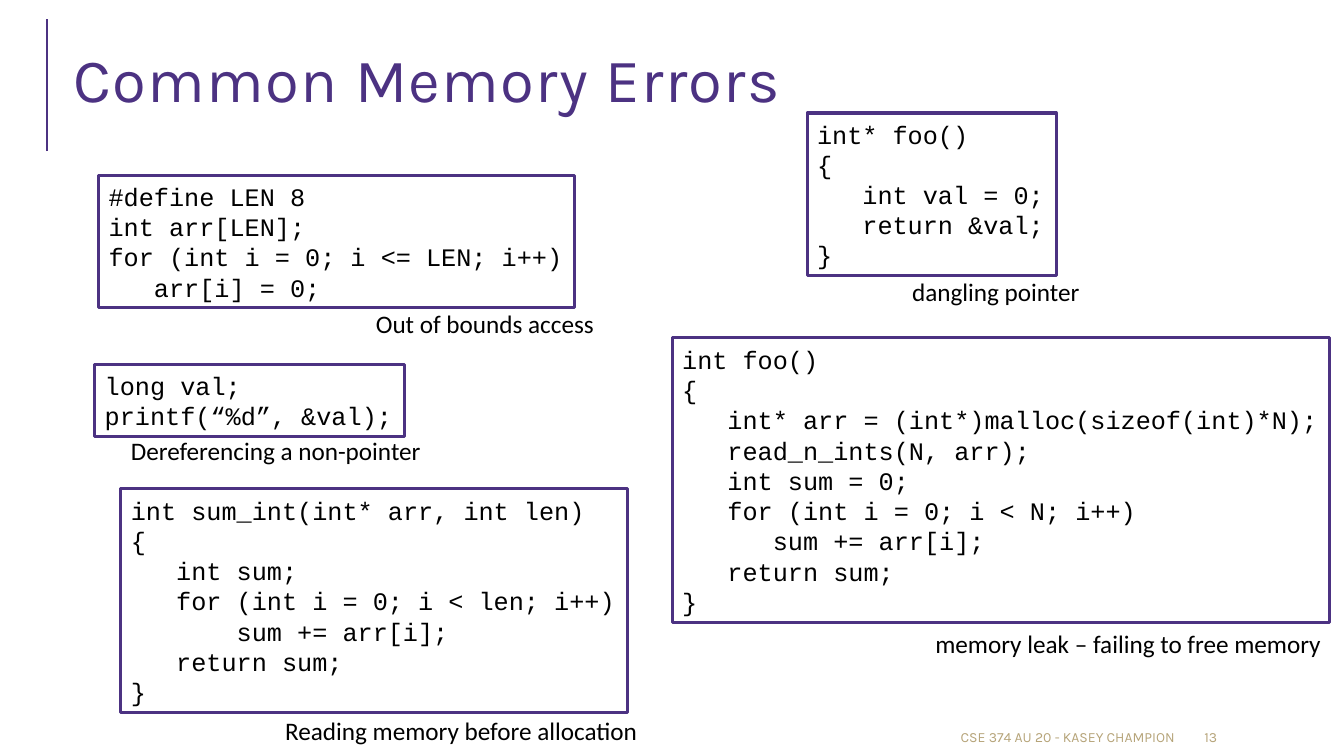
import pptx
import pptx.util
import pptx.dml.color
import pptx.enum.shapes
import pptx.enum.text
import lxml.etree

Pt = pptx.util.Pt
COLORS = {"purple": "4C3282", "gold": "B6A479", "ink": "000000"}

TITLE = "Common Memory Errors"
FOOTER = "CSE 374 AU 20 - KASEY CHAMPION"
PAGE_NUMBER = "13"

ERRORS = [
    {"at": (70.5, 125.3), "caption": "Out of bounds access",
     "caption_at": (261.4, 216.7), "caption_width": 172,
     "code": ["#define LEN 8",
              "int arr[LEN];",
              "for (int i = 0; i <= LEN; i++)",
              "   arr[i] = 0;"]},
    {"at": (576.5, 80.7), "caption": "dangling pointer",
     "caption_at": (644.4, 193.7), "caption_width": 143,
     "code": ["int* foo()",
              "{",
              "   int val = 0;",
              "   return &val;",
              "}"]},
    {"at": (67.7, 260.6), "caption": "Dereferencing a non-pointer",
     "caption_at": (86.4, 307.4), "caption_width": 224,
     "code": ["long val;",
              "printf(“%d”, &val);"]},
    {"at": (86.4, 349.2), "caption": "Reading memory before allocation",
     "caption_at": (196.6, 507.6), "caption_width": 269,
     "code": ["int sum_int(int* arr, int len)",
              "{",
              "   int sum;",
              "   for (int i = 0; i < len; i++)",
              "       sum += arr[i];",
              "   return sum;",
              "}"]},
    {"at": (480.2, 241.2), "caption": "memory leak – failing to free memory",
     "caption_at": (661, 445), "caption_width": 320,
     "code": ["int foo()",
              "{",
              "   int* arr = (int*)malloc(sizeof(int)*N);",
              "   read_n_ints(N, arr);",
              "   int sum = 0;",
              "   for (int i = 0; i < N; i++)",
              "      sum += arr[i];",
              "   return sum;",
              "}"]},
]

COLUMN_WIDTH = 10.8
LINE_HEIGHT = 21.8
CAPTION_HEIGHT = 29
LEFT = pptx.enum.text.PP_ALIGN.LEFT
RIGHT = pptx.enum.text.PP_ALIGN.RIGHT
MIDDLE = pptx.enum.text.MSO_ANCHOR.MIDDLE
TOP = pptx.enum.text.MSO_ANCHOR.TOP


def color(name):
    return pptx.dml.color.RGBColor.from_string(COLORS[name])


def style(paragraph, font, size, ink, align=LEFT):
    paragraph.alignment = align
    paragraph.font.name = font
    paragraph.font.size = Pt(size)
    paragraph.font.color.rgb = color(ink)


def add_label(slide, text, box, font, size, ink, align=LEFT, anchor=TOP):
    frame = slide.shapes.add_textbox(*map(Pt, box)).text_frame
    frame.word_wrap = True
    frame.vertical_anchor = anchor
    frame.text = text
    style(frame.paragraphs[0], font, size, ink, align)


def add_code(slide, lines, left, top):
    width = max(map(len, lines)) * COLUMN_WIDTH + 16
    height = len(lines) * LINE_HEIGHT + 7.4
    listing = slide.shapes.add_shape(
        pptx.enum.shapes.MSO_SHAPE.RECTANGLE, Pt(left), Pt(top), Pt(width), Pt(height))
    listing.shadow.inherit = False
    listing.fill.background()
    listing.line.color.rgb = color("purple")
    listing.line.width = Pt(2.25)
    frame = listing.text_frame
    frame.word_wrap = False
    frame.vertical_anchor = MIDDLE
    frame.text = "\n".join(line.lstrip() for line in lines)
    for paragraph, line in zip(frame.paragraphs, lines):
        style(paragraph, "Courier New", 18, "ink")
        depth = len(line) - len(line.lstrip())
        if depth:
            paragraph._p.get_or_add_pPr().set("marL", str(Pt(depth * COLUMN_WIDTH)))


def add_title(slide):
    title = slide.shapes.title
    title.left, title.top, title.width, title.height = map(Pt, (45.4, 20.9, 880.6, 79.9))
    frame = title.text_frame
    frame.text = TITLE
    frame.vertical_anchor = MIDDLE
    heading = frame.paragraphs[0]
    style(heading, "Karla", 44, "purple")
    heading.line_spacing = 0.8
    heading.runs[0]._r.get_or_add_rPr().set("spc", "100")


def add_rule(slide):
    rule = slide.shapes.add_connector(
        pptx.enum.shapes.MSO_CONNECTOR.STRAIGHT, Pt(33.8), Pt(108), Pt(33.8), Pt(13.7))
    rule.line.color.rgb = color("purple")
    rule.line.width = Pt(1.5)
    lxml.etree.SubElement(rule._element.spPr, pptx.oxml.ns.qn("a:effectLst"))


def main():
    deck = pptx.Presentation()
    deck.slide_width, deck.slide_height = Pt(960), Pt(540)
    slide = deck.slides.add_slide(deck.slide_layouts[5])
    add_rule(slide)
    add_title(slide)
    add_label(slide, PAGE_NUMBER, (853.2, 515.5, 76.3, 21.6), "Karla", 10, "gold", anchor=MIDDLE)
    add_label(slide, FOOTER, (381.6, 515.5, 464.4, 21.6), "Karla", 10, "gold", RIGHT, MIDDLE)
    for error in ERRORS:
        add_code(slide, error["code"], *error["at"])
        caption_box = (*error["caption_at"], error["caption_width"], CAPTION_HEIGHT)
        add_label(slide, error["caption"], caption_box, "Calibri", 18, "ink")
    deck.save("out.pptx")


if __name__ == "__main__":
    main()
